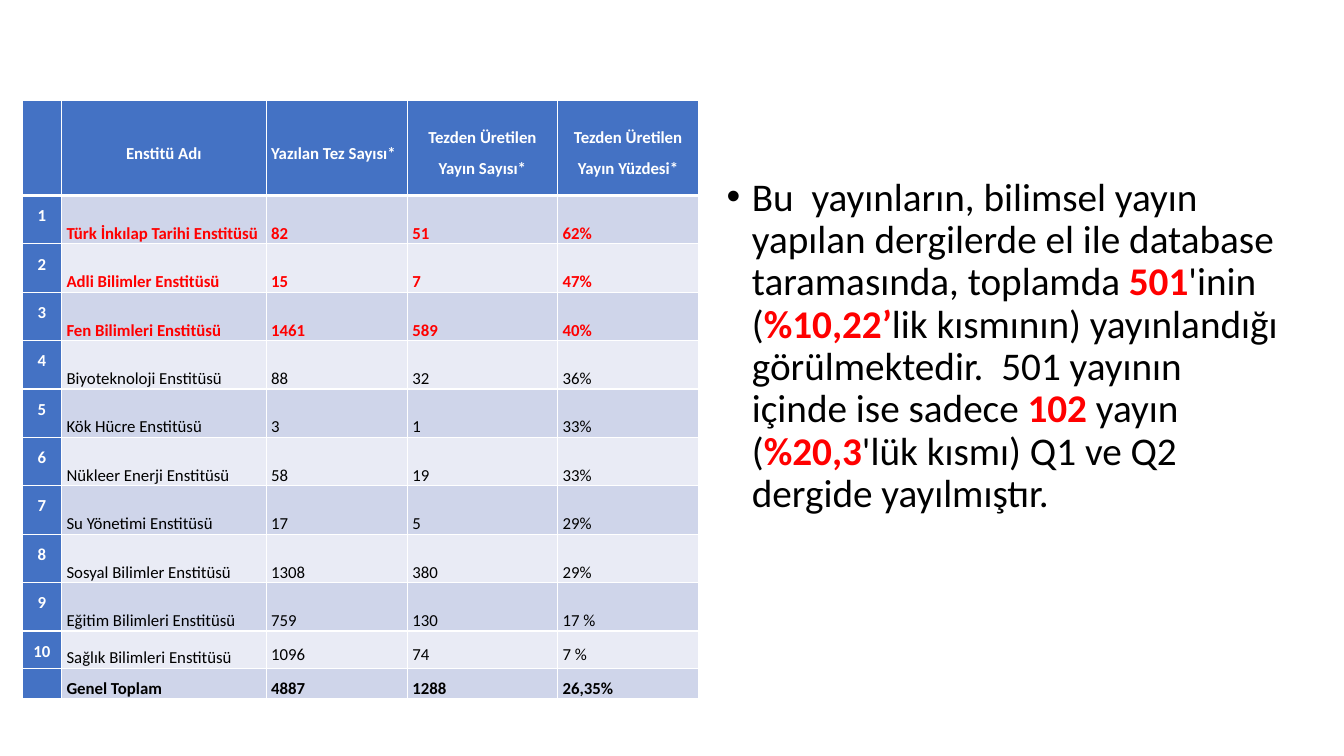
from lxml.etree import SubElement
from pptx import Presentation
from pptx.dml.color import RGBColor
from pptx.enum.text import MSO_ANCHOR as Anchor, PP_ALIGN as Align
from pptx.oxml.ns import qn
from pptx.util import Inches, Pt

# Content
HEADINGS = ("", "Enstitü Adı", "Yazılan Tez Sayısı*",
            "Tezden Üretilen Yayın Sayısı*", "Tezden Üretilen Yayın Yüzdesi*")
INSTITUTES = [
    ("Türk İnkılap Tarihi Enstitüsü", "82", "51", "62%"),
    ("Adli Bilimler Enstitüsü", "15", "7", "47%"),
    ("Fen Bilimleri Enstitüsü", "1461", "589", "40%"),
    ("Biyoteknoloji Enstitüsü", "88", "32", "36%"),
    ("Kök Hücre Enstitüsü", "3", "1", "33%"),
    ("Nükleer Enerji Enstitüsü", "58", "19", "33%"),
    ("Su Yönetimi Enstitüsü", "17", "5", "29%"),
    ("Sosyal Bilimler Enstitüsü", "1308", "380", "29%"),
    ("Eğitim Bilimleri Enstitüsü", "759", "130", "17 %"),
    ("Sağlık Bilimleri Enstitüsü", "1096", "74", "7 %"),
]
TOTAL = ("", "Genel Toplam", "4887", "1288", "26,35%")
HIGHLIGHTED = 3  # leading institutes shown in red

# Findings: (text, emphasised)
FINDINGS = [
    ("Bu  yayınların, bilimsel yayın yapılan dergilerde el ile database "
     "taramasında, toplamda ", False),
    ("501", True),
    ("'inin  (", False),
    ("%10,22’", True),
    ("lik kısmının) yayınlandığı görülmektedir.  501 yayının içinde ise sadece ", False),
    ("102", True),
    (" yayın (", False),
    ("%20,3", True),
    ("'lük kısmı) Q1 ve Q2 dergide yayılmıştır.", False),
]

COLUMN_WIDTHS = (0.39, 2.03, 1.4, 1.49, 1.4)
ROW_HEIGHTS = [0.94] + [0.48] * 9 + [0.37, 0.27]

FONT = "Calibri"
WHITE = RGBColor(0xFF, 0xFF, 0xFF)
BLACK = RGBColor(0, 0, 0)
RED = RGBColor(0xFF, 0, 0)
BLUE = RGBColor(0x44, 0x72, 0xC4)
BANDS = (RGBColor(0xE9, 0xEB, 0xF5), RGBColor(0xCF, 0xD5, 0xEA))


def add_text(paragraph, text, size=12, color=BLACK, bold=False):
    run = paragraph.add_run()
    run.text = text
    run.font.name = FONT
    run.font.size = Pt(size)
    run.font.color.rgb = color
    run.font.bold = bold


def add_borders(cell, top=1, bottom=1):
    properties = cell._tc.get_or_add_tcPr()
    for side, width in (("L", 1), ("R", 1), ("T", top), ("B", bottom)):
        line = SubElement(properties, qn(f"a:ln{side}"), w=str(Pt(width)))
        fill = SubElement(line, qn("a:solidFill"))
        SubElement(fill, qn("a:srgbClr"), val=str(WHITE))


def cell_format(row, column):
    """Return vertical anchor, alignment, text colour and weight."""
    last = len(ROW_HEIGHTS) - 1
    if row == 0:
        align = Align.LEFT if column == 2 else Align.CENTER
        return Anchor.MIDDLE, align, WHITE, True
    if column == 0:
        return Anchor.TOP, Align.CENTER, WHITE, True
    if row == last:
        if column == 1:
            return Anchor.MIDDLE, Align.LEFT, BLACK, True
        return Anchor.TOP, Align.JUSTIFY, BLACK, True
    anchor = Anchor.MIDDLE if row == last - 1 and column > 1 else Anchor.BOTTOM
    top_ranked = row <= HIGHLIGHTED
    return anchor, Align.JUSTIFY, RED if top_ranked else BLACK, top_ranked


presentation = Presentation()
presentation.slide_width = Inches(13.33)
presentation.slide_height = Inches(7.5)
slide = presentation.slides.add_slide(presentation.slide_layouts[6])

# Findings paragraph
findings_box = slide.shapes.add_textbox(Inches(7.11), Inches(1.71), Inches(5.67), Inches(4.76))
findings_box.text_frame.word_wrap = True
findings = findings_box.text_frame.paragraphs[0]
findings.line_spacing = 0.9
findings.space_before = Pt(10)
bullet_properties = findings._p.get_or_add_pPr()
bullet_properties.set("marL", str(Inches(0.25)))
bullet_properties.set("indent", str(-Inches(0.25)))
SubElement(bullet_properties, qn("a:buFont"), typeface="Arial")
SubElement(bullet_properties, qn("a:buChar"), char="•")
for text, emphasised in FINDINGS:
    add_text(findings, text, size=28, color=RED if emphasised else BLACK, bold=emphasised)

# Institute table
numbered = [(str(rank), *institute) for rank, institute in enumerate(INSTITUTES, 1)]
table_rows = [HEADINGS, *numbered, TOTAL]
institute_table = slide.shapes.add_table(
    len(table_rows), len(HEADINGS), Inches(0.22), Inches(1),
    Inches(sum(COLUMN_WIDTHS)), Inches(sum(ROW_HEIGHTS))).table
for column, width in enumerate(COLUMN_WIDTHS):
    institute_table.columns[column].width = Inches(width)

for row, values in enumerate(table_rows):
    institute_table.rows[row].height = Inches(ROW_HEIGHTS[row])
    for column, value in enumerate(values):
        cell = institute_table.cell(row, column)
        add_borders(cell, top=3 if row == 1 else 1, bottom=3 if row == 0 else 1)
        cell.fill.solid()
        cell.fill.fore_color.rgb = BLUE if row == 0 or column == 0 else BANDS[row % 2]
        cell.margin_left = cell.margin_right = Inches(0.05)
        cell.margin_top = cell.margin_bottom = 0
        if value:
            anchor, align, color, bold = cell_format(row, column)
            cell.vertical_anchor = anchor
            paragraph = cell.text_frame.paragraphs[0]
            paragraph.alignment = align
            paragraph.line_spacing = 1.5
            paragraph.space_after = Pt(8)
            add_text(paragraph, value, color=color, bold=bold)

presentation.save("out.pptx")
